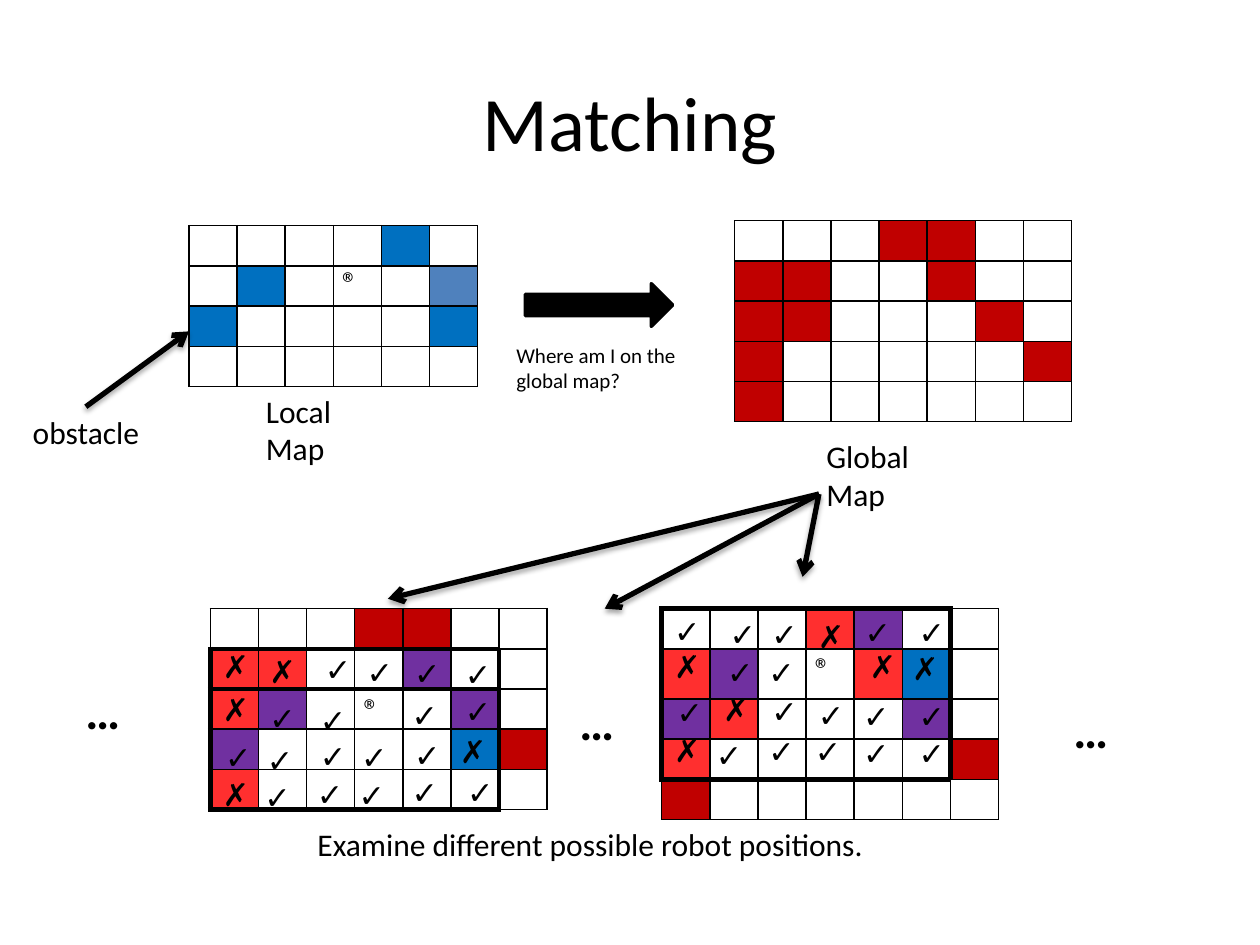
from lxml import etree
from pptx import Presentation
from pptx.dml.color import RGBColor
from pptx.enum import shapes, text
from pptx.oxml import ns
from pptx.util import Cm, Pt

COLORS = {
    "ink": "000000",
    "free": "FFFFFF",
    "local": "0070C0",
    "local_light": "4F81BD",
    "global": "C00000",
    "miss": "FF2F2F",
    "match": "7030A0",
}
CELL_CODES = {"w": "free", "b": "local", "l": "local_light",
              "g": "global", "m": "miss", "p": "match"}  # "." has no fill
FONT = "Calibri"
CELL_W, CELL_H = 0.97, 0.81
MARK_W, MARK_H = 0.95, 1.02

LOCAL_MAP = ["wwwwbw", "wbwwwl", "bwwwwb", "wwwwww"]
GLOBAL_MAP = ["...gg..", "gg..g..", "gg...g.", "g.....g", "g......"]
LOWER_MATCH = ["...gg..", "mm..p..", "mp...p.", "p....bg", "m......"]
UPPER_MATCH = ["...mp..", "mp..mb.", "pm...p.", "m.....g", "g......"]

# Each row: its symbols, then their offsets from the map's corner
LOWER_MARKS = [
    ("✗✗✓✓✓✓", [(0, 0.64), (0.94, 0.74), (2.06, 0.71), (2.9, 0.76), (3.86, 0.79), (4.88, 0.81)]),
    ("✗✓✓®✓✓", [(0, 1.52), (0.94, 1.7), (1.96, 1.73), (2.84, 1.52), (3.81, 1.63), (4.88, 1.55)]),
    ("✓✓✓✓✓✗", [(0.05, 2.49), (0.89, 2.54), (1.96, 2.46), (2.79, 2.49), (3.86, 2.44), (4.78, 2.36)]),
    ("✗✓✓✓✓✓", [(0, 3.23), (0.84, 3.28), (1.9, 3.23), (2.74, 3.25), (3.81, 3.18), (4.93, 3.18)]),
]
UPPER_MARKS = [
    ("✓✓✓✗✓✓", [(0, -0.05), (1.12, 0), (1.96, 0), (2.9, 0.05), (3.84, -0.03), (4.93, -0.03)]),
    ("✗✓✓®✗✗", [(0, 0.64), (1.07, 0.76), (1.9, 0.76), (2.84, 0.69), (3.94, 0.64), (4.8, 0.69)]),
    ("✓✗✓✓✓✓", [(0.05, 1.57), (0.99, 1.52), (1.96, 1.55), (2.9, 1.63), (3.81, 1.65), (4.93, 1.65)]),
    ("✗✓✓✓✓✓", [(0, 2.34), (0.84, 2.44), (1.9, 2.36), (2.84, 2.36), (3.81, 2.41), (4.93, 2.41)]),
]


def rgb(name):
    return RGBColor.from_string(COLORS[name])


def add_label(slide, box, words, size=18, bold=False, wrap=False):
    label = slide.shapes.add_textbox(*map(Cm, box))
    frame = label.text_frame
    frame.word_wrap = wrap
    frame.auto_size = text.MSO_AUTO_SIZE.SHAPE_TO_FIT_TEXT
    frame.text = words
    font = frame.paragraphs[0].runs[0].font
    font.name, font.size, font.bold = FONT, Pt(size), bold
    font.color.rgb = rgb("ink")
    return label


def add_title(slide, box, words):
    frame = add_label(slide, box, words, size=44, wrap=True).text_frame
    frame.auto_size = text.MSO_AUTO_SIZE.NONE
    frame.vertical_anchor = text.MSO_ANCHOR.MIDDLE
    frame.paragraphs[0].alignment = text.PP_ALIGN.CENTER


def add_map_name(slide, box, words):
    """Label whose wide right margin puts each word on its own line."""
    add_label(slide, box, words, wrap=True).text_frame.margin_right = Cm(0.8)


def add_border(cell, side, width):
    line = etree.SubElement(cell._tc.get_or_add_tcPr(), ns.qn(f"a:ln{side}"), w=str(Pt(width)))
    fill = etree.SubElement(line, ns.qn("a:solidFill"))
    etree.SubElement(fill, ns.qn("a:srgbClr"), val=COLORS["ink"])


def is_inside(frame, row, col):
    top, bottom, left, right = frame
    return top <= row <= bottom and left <= col <= right


def add_map(slide, left, top, rows, frames=(), tall_rows=()):
    """Grid map; frames are (top, bottom, left, right) cell ranges with a thick outline."""
    heights = [CELL_H + (0.2 if row in tall_rows else 0) for row in range(len(rows))]
    width = CELL_W * len(rows[0])
    grid = slide.shapes.add_table(len(rows), len(rows[0]), Cm(left), Cm(top),
                                  Cm(width), Cm(sum(heights))).table
    grid.first_row = grid.horz_banding = False
    for column in grid.columns:
        column.width = Cm(CELL_W)
    for r, codes in enumerate(rows):
        grid.rows[r].height = Cm(heights[r])
        for c, code in enumerate(codes):
            cell = grid.cell(r, c)
            cell.margin_top = cell.margin_bottom = 0
            neighbours = {"L": (r, c - 1), "R": (r, c + 1), "T": (r - 1, c), "B": (r + 1, c)}
            for side, place in neighbours.items():
                thick = any(is_inside(f, r, c) != is_inside(f, *place) for f in frames)
                add_border(cell, side, 3 if thick else 1)
            if code in CELL_CODES:
                cell.fill.solid()
                cell.fill.fore_color.rgb = rgb(CELL_CODES[code])
            else:
                cell.fill.background()


def add_marks(slide, left, top, marks):
    for symbols, offsets in marks:
        for symbol, (dx, dy) in zip(symbols, offsets):
            add_label(slide, (left + dx, top + dy, MARK_W, MARK_H), symbol)


def add_pointer(slide, start, end):
    pointer = slide.shapes.add_connector(shapes.MSO_CONNECTOR.STRAIGHT, *map(Cm, start + end))
    pointer.line.color.rgb = rgb("ink")
    pointer.line.width = Pt(3)
    etree.SubElement(pointer.line._get_or_add_ln(), ns.qn("a:tailEnd"), type="arrow")
    effects = etree.SubElement(pointer._element.spPr, ns.qn("a:effectLst"))
    shadow = etree.SubElement(effects, ns.qn("a:outerShdw"), blurRad=str(Pt(3.1)),
                              dist=str(Pt(1.8)), dir="5400000", rotWithShape="0")
    color = etree.SubElement(shadow, ns.qn("a:srgbClr"), val=COLORS["ink"])
    etree.SubElement(color, ns.qn("a:alpha"), val="35000")


def add_local_region(slide, left, top):
    add_map(slide, left, top, LOCAL_MAP)
    add_label(slide, (left + 2.84, top + 0.63, MARK_W, MARK_H), "®")
    add_map_name(slide, (left + 1.3, top + 3.22, 3.15, 1.02), "Local Map")
    add_label(slide, (left - 3.4, top + 3.65, 3, 1.02), "obstacle")
    add_pointer(slide, (left - 2.08, top + 3.65), (left, top + 2.13))


def add_question(slide, left, top):
    arrow = slide.shapes.add_shape(shapes.MSO_SHAPE.RIGHT_ARROW, Cm(left + 0.43), Cm(top),
                                   Cm(2.97), Cm(0.86))
    arrow.shadow.inherit = False
    arrow.fill.solid()
    arrow.fill.fore_color.rgb = arrow.line.color.rgb = rgb("ink")
    arrow.line.width = Pt(2)
    add_label(slide, (left, top + 1.06, 4.24, 1.27), "Where am I on the global map?",
              size=12, wrap=True)


def add_global_region(slide, left, top):
    add_map(slide, left, top, GLOBAL_MAP)
    add_map_name(slide, (left + 1.6, top + 4.24, 3.48, 1.02), "Global Map")


def add_candidates(slide, left, top):
    """The tried robot positions, with pointers from the global map's name."""
    upper_left = left + 9.1
    add_map(slide, left, top, LOWER_MATCH, frames=[(1, 4, 0, 5), (1, 1, 0, 5)])
    add_map(slide, upper_left, top, UPPER_MATCH, frames=[(0, 3, 0, 5)], tall_rows=[1])
    add_marks(slide, left, top, LOWER_MARKS)
    add_marks(slide, upper_left, top, UPPER_MARKS)
    for dx, dy in [(-2.77, 1.32), (7.19, 1.55), (17.15, 1.7)]:
        add_label(slide, (left + dx, top + dy, 1.5, 1.45), "…", size=28, bold=True)
    for dx, dy in [(11.94, -0.64), (7.95, 0), (3.58, -0.2)]:
        add_pointer(slide, (left + 12.27, top - 2.31), (left + dx, top + dy))
    add_label(slide, (left + 1.91, top + 4.24, 11.61, 1.02),
              "Examine different possible robot positions.")


def main():
    deck = Presentation()
    deck.slide_width, deck.slide_height = Cm(25.4), Cm(19.05)
    slide = deck.slides.add_slide(deck.slide_layouts[6])
    add_title(slide, (1.27, 0.84, 22.86, 3.18), "Matching")
    add_local_region(slide, 3.81, 4.55)
    add_question(slide, 10.16, 5.72)
    add_global_region(slide, 14.81, 4.45)
    add_candidates(slide, 4.24, 12.27)
    deck.save("out.pptx")


if __name__ == "__main__":
    main()
